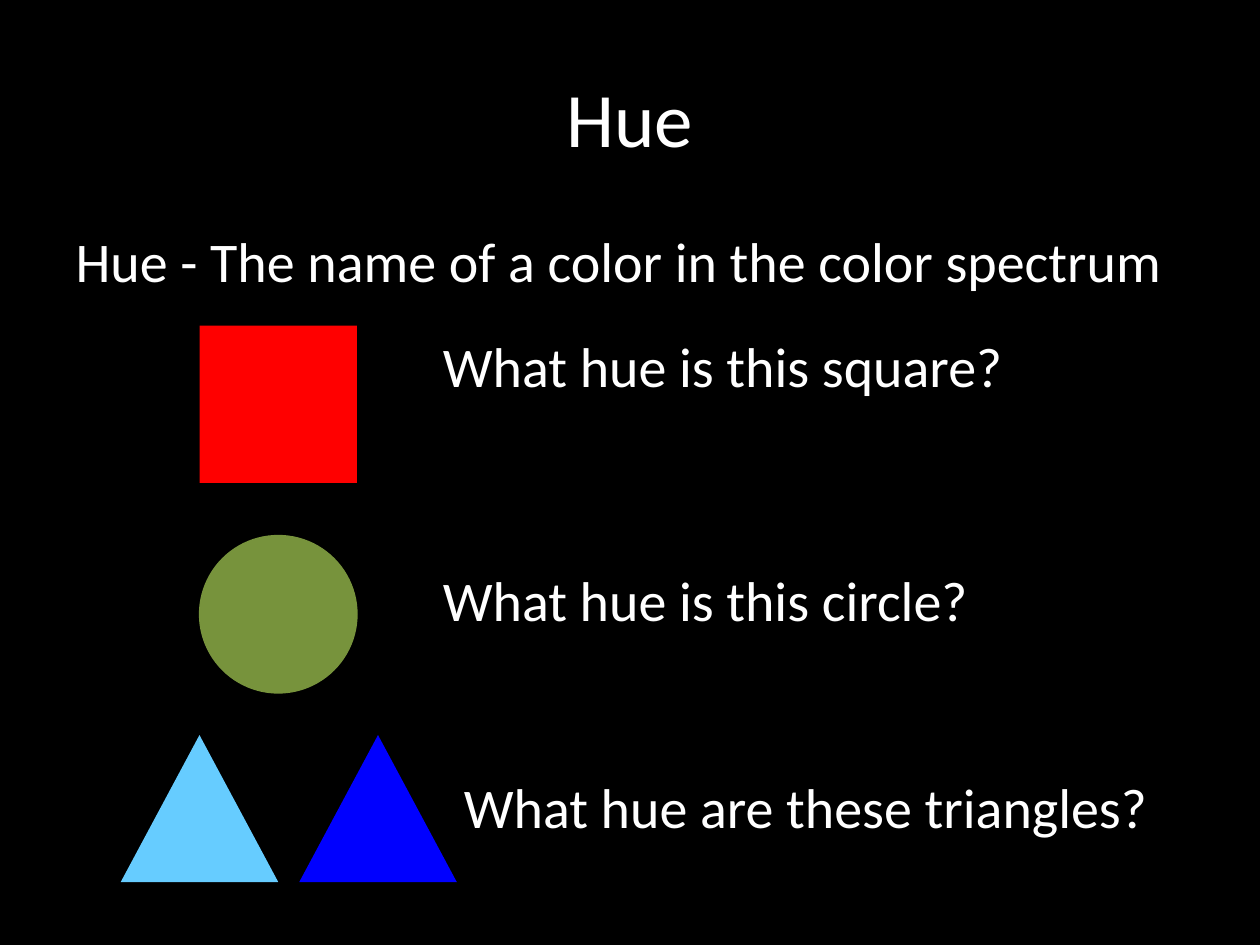
from lxml.etree import SubElement
from pptx import Presentation
from pptx.dml.color import RGBColor
from pptx.enum.shapes import MSO_SHAPE as Preset
from pptx.enum.text import MSO_ANCHOR as Anchor, MSO_AUTO_SIZE as AutoSize, PP_ALIGN as Align
from pptx.oxml.ns import qn
from pptx.util import Inches, Pt

BLACK = RGBColor(0x00, 0x00, 0x00)
WHITE = RGBColor(0xFF, 0xFF, 0xFF)
RED = RGBColor(0xFF, 0x00, 0x00)
OLIVE = RGBColor(0x77, 0x93, 0x3C)
SKY = RGBColor(0x66, 0xCC, 0xFF)
BLUE = RGBColor(0x00, 0x00, 0xFF)


class HueSlide:
    """Style and current slide; positions are in columns and rows of a grid."""

    CELL = Inches(1) / 12  # 120 columns by 90 rows
    FONT = "Calibri"
    TITLE_SIZE = 44
    TEXT_SIZE = 32

    def __init__(self, presentation):
        self.slide = presentation.slides.add_slide(presentation.slide_layouts[1])
        fill = self.slide.background.fill
        fill.solid()
        fill.fore_color.rgb = BLACK

    def area(self, *cells):
        return [round(cell * self.CELL) for cell in cells]

    def set_text(self, shape, text, size, align=Align.LEFT):
        shape.text_frame.word_wrap = True
        paragraph = shape.text_frame.paragraphs[0]
        paragraph.text = text
        paragraph.alignment = align
        font = paragraph.font
        font.name, font.size, font.color.rgb = self.FONT, Pt(size), WHITE
        return paragraph

    def place(self, shape, *cells):
        shape.left, shape.top, shape.width, shape.height = self.area(*cells)

    def title(self, text, *cells):
        shape = self.slide.shapes.title
        self.place(shape, *cells)
        shape.text_frame.vertical_anchor = Anchor.MIDDLE
        self.set_text(shape, text, self.TITLE_SIZE, Align.CENTER)

    def body(self, text, *cells):
        shape = self.slide.placeholders[1]
        self.place(shape, *cells)
        properties = shape.text_frame.paragraphs[0]._p.get_or_add_pPr()
        properties.set("marL", "0")
        properties.set("indent", "0")
        SubElement(properties, qn("a:buNone"))
        self.set_text(shape, text, self.TEXT_SIZE).space_before = Pt(0)

    def figure(self, preset, color, *cells, outlined=False):
        shape = self.slide.shapes.add_shape(preset, *self.area(*cells))
        shape.shadow.inherit = False
        shape.fill.solid()
        shape.fill.fore_color.rgb = color
        if outlined:
            shape.line.color.rgb = color
            shape.line.width = Pt(0.75)
        else:
            shape.line.fill.background()

    def question(self, text, *cells):
        shape = self.slide.shapes.add_textbox(*self.area(*cells))
        self.set_text(shape, text, self.TEXT_SIZE)
        shape.text_frame.auto_size = AutoSize.SHAPE_TO_FIT_TEXT


def main():
    presentation = Presentation()
    presentation.slide_width, presentation.slide_height = Inches(10), Inches(7.5)
    page = HueSlide(presentation)

    # Heading and definition
    page.title("Hue", 6, 3.6, 108, 15)
    page.body("Hue - The name of a color in the color spectrum", 6, 21, 108, 10)

    # Square
    page.figure(Preset.RECTANGLE, RED, 19, 31, 15, 15)
    page.question("What hue is this square?", 41, 31, 69, 7.7)

    # Circle
    page.figure(Preset.OVAL, OLIVE, 19, 51, 15, 15, outlined=True)
    page.question("What hue is this circle?", 41, 53.3, 55, 7.7)

    # Pair of triangles
    for index, color in enumerate((SKY, BLUE)):
        page.figure(Preset.ISOSCELES_TRIANGLE, color, 11.5 + 17 * index, 70, 15, 14)
    page.question("What hue are these triangles?", 43, 73, 71, 7.7)

    presentation.save("out.pptx")


if __name__ == "__main__":
    main()
